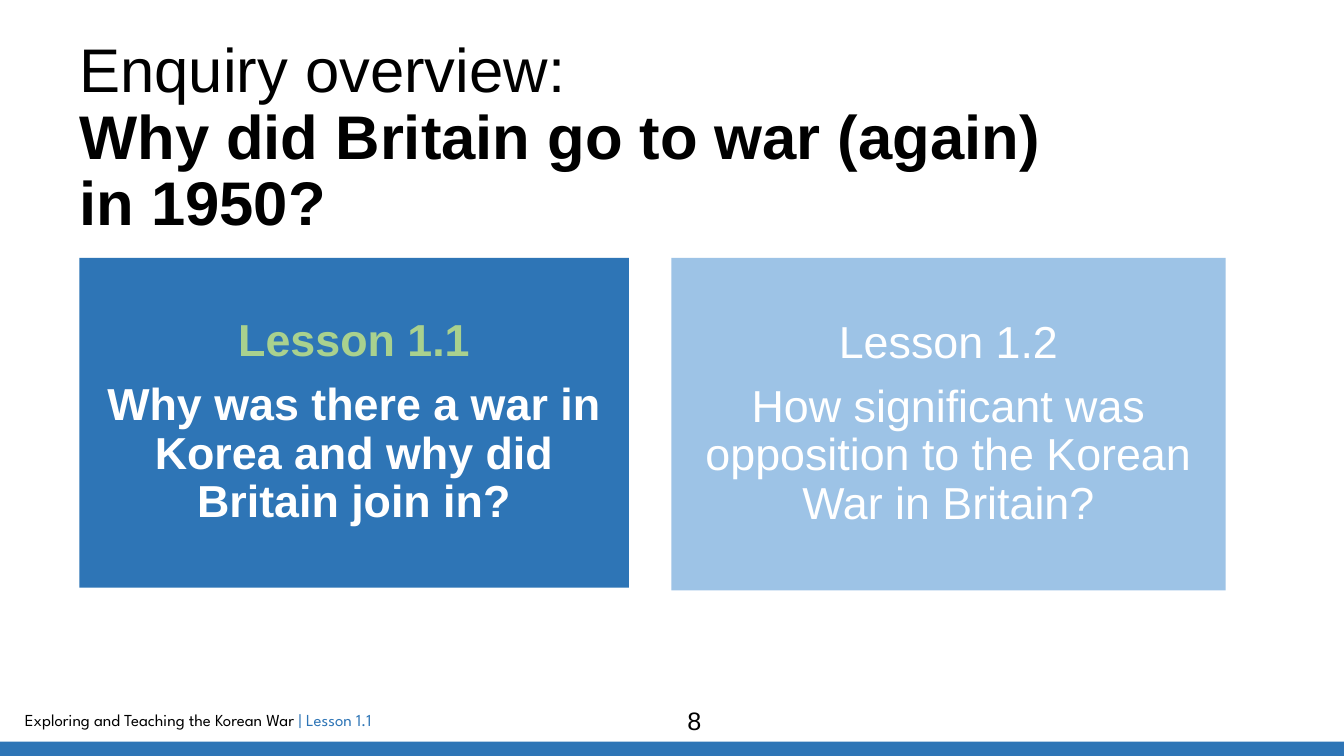
from dataclasses import dataclass

from pptx import Presentation
from pptx.dml.color import RGBColor
from pptx.enum import shapes, text
from pptx.util import Cm, Pt


@dataclass(frozen=True)
class Theme:
    body_font: str = "Arial"
    footer_font: str = "League Spartan"
    black: str = "000000"
    white: str = "FFFFFF"
    blue: str = "2E75B6"
    pale_blue: str = "9DC3E6"
    green: str = "A9D18E"
    title_size: int = 44
    lesson_size: int = 32
    number_size: int = 18
    footer_size: int = 12


@dataclass(frozen=True)
class Area:
    left: float
    top: float
    width: float
    height: float

    def lengths(self) -> tuple:
        return Cm(self.left), Cm(self.top), Cm(self.width), Cm(self.height)


@dataclass(frozen=True)
class Span:
    words: str
    size: int
    color: str
    bold: bool = False
    font: str = "Arial"


@dataclass(frozen=True)
class Lesson:
    area: Area
    fill: str
    heading: Span
    question: Span


THEME = Theme()
LESSONS = (
    Lesson(
        Area(2, 6.5, 13.85, 8.31),
        THEME.blue,
        Span("Lesson 1.1", THEME.lesson_size, THEME.green, True),
        Span("Why was there a war in Korea and why did Britain join in?",
             THEME.lesson_size, THEME.white, True),
    ),
    Lesson(
        Area(16.92, 6.5, 13.97, 8.38),
        THEME.pale_blue,
        Span("Lesson 1.2", THEME.lesson_size, THEME.white),
        Span("How significant was opposition to the Korean War in Britain?",
             THEME.lesson_size, THEME.white),
    ),
)
TITLE = (
    Span("Enquiry overview: ", THEME.title_size, THEME.black),
    Span("Why did Britain go to war (again) ", THEME.title_size, THEME.black, True),
    Span("in 1950?", THEME.title_size, THEME.black, True),
)
FOOTER = (
    Span("Exploring and Teaching the Korean War ", THEME.footer_size,
         THEME.black, font=THEME.footer_font),
    Span("| Lesson 1.1", THEME.footer_size, THEME.blue, font=THEME.footer_font),
)
PAGE_NUMBER = Span("8", THEME.number_size, THEME.black)


def apply(target, formats: dict) -> None:
    for name, value in formats.items():
        setattr(target, name, value)


def set_margins(frame, margin: float) -> None:
    sides = ("left", "top", "right", "bottom")
    apply(frame, {f"margin_{side}": Cm(margin) for side in sides})


def add_span(para, span: Span) -> None:
    run = para.add_run()
    run.text = span.words
    apply(run.font, {"name": span.font, "size": Pt(span.size), "bold": span.bold})
    run.font.color.rgb = RGBColor.from_string(span.color)


def add_block(page, area: Area, fill: str):
    block = page.shapes.add_shape(shapes.MSO_SHAPE.RECTANGLE, *area.lengths())
    block.shadow.inherit = False
    block.fill.solid()
    block.fill.fore_color.rgb = RGBColor.from_string(fill)
    block.line.fill.background()
    return block


def add_label(page, area: Area, spans: tuple, align) -> None:
    box = page.shapes.add_textbox(*area.lengths())
    box.text_frame.word_wrap = True
    para = box.text_frame.paragraphs[0]
    para.alignment = align
    for span in spans:
        add_span(para, span)


def add_title(page) -> None:
    title = page.shapes.title
    area = Area(2, 1, 29.21, 3.68)
    apply(title, dict(zip(("left", "top", "width", "height"), area.lengths())))
    frame = title.text_frame
    set_margins(frame, 0)
    apply(frame, {
        "word_wrap": True,
        "auto_size": text.MSO_AUTO_SIZE.NONE,
        "vertical_anchor": text.MSO_ANCHOR.TOP,
    })
    para = frame.paragraphs[0]
    apply(para, {"alignment": text.PP_ALIGN.LEFT, "line_spacing": 0.9})
    for index, span in enumerate(TITLE):
        if index:
            para.add_line_break()
        add_span(para, span)


def add_lesson(page, lesson: Lesson) -> None:
    frame = add_block(page, lesson.area, lesson.fill).text_frame
    set_margins(frame, 0.36)
    apply(frame, {"word_wrap": True, "vertical_anchor": text.MSO_ANCHOR.MIDDLE})
    paras = (frame.paragraphs[0], frame.add_paragraph())
    for para, span in zip(paras, (lesson.heading, lesson.question)):
        apply(para, {
            "alignment": text.PP_ALIGN.CENTER,
            "line_spacing": 0.9,
            "space_after": Pt(0.35 * span.size),
        })
        add_span(para, span)


def main() -> None:
    deck = Presentation()
    apply(deck, {"slide_width": Cm(33.87), "slide_height": Cm(19.05)})
    page = deck.slides.add_slide(deck.slide_layouts[5])
    add_label(page, Area(0.38, 17.75, 19.86, 0.76), FOOTER, text.PP_ALIGN.LEFT)
    add_block(page, Area(0, 18.69, 33.87, 0.36), THEME.blue)
    add_title(page)
    for lesson in LESSONS:
        add_lesson(page, lesson)
    add_label(page, Area(11.3, 17.65, 12.4, 1.02), (PAGE_NUMBER,),
              text.PP_ALIGN.CENTER)
    deck.save("out.pptx")


if __name__ == "__main__":
    main()
